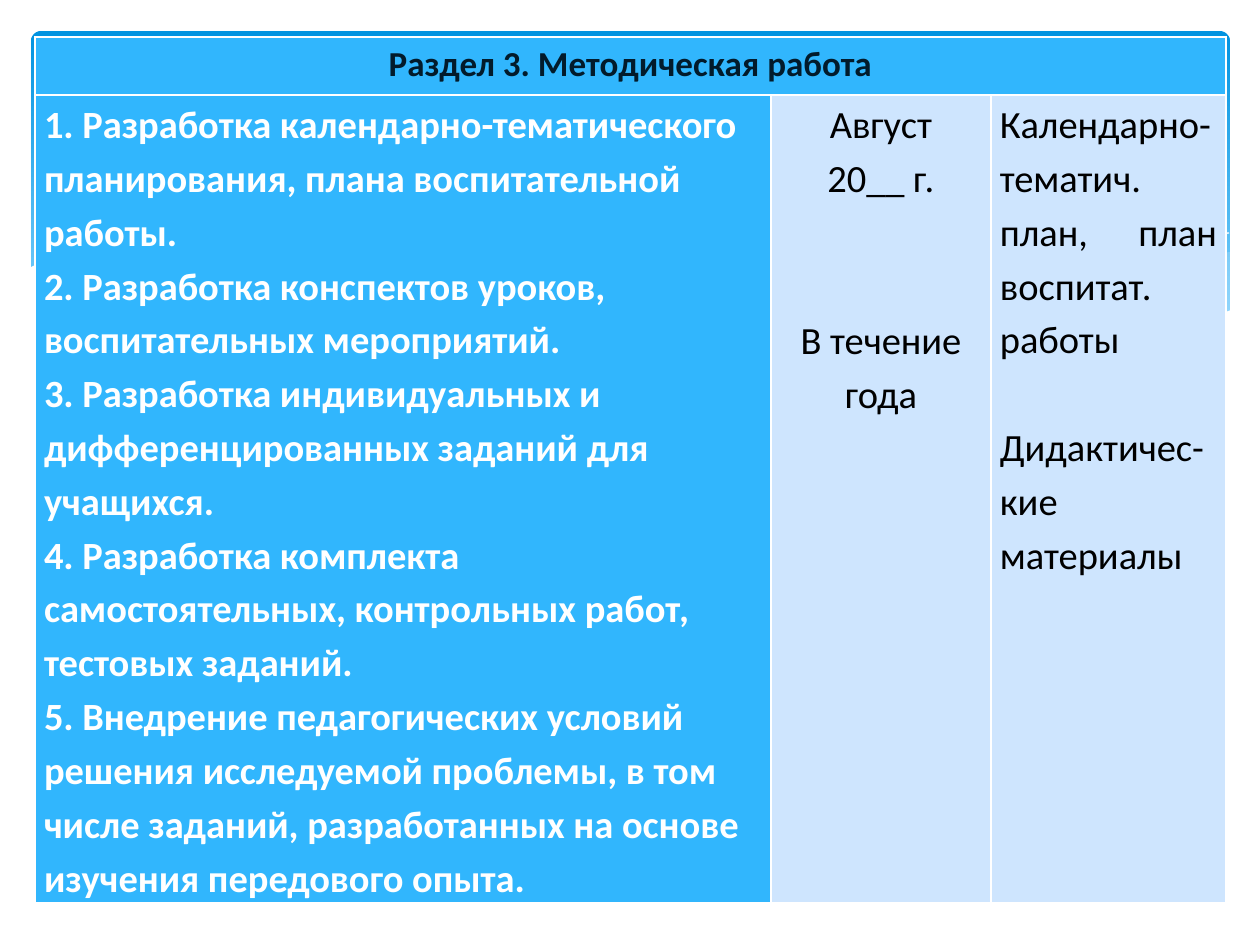
from lxml import etree
from pptx import Presentation
from pptx import util as u
from pptx.dml.color import RGBColor
from pptx.enum import shapes, text
from pptx.oxml.ns import qn

SCALE = 914400 / 126


def px(length):
    return u.Emu(round(length * SCALE))


def color(value):
    return RGBColor.from_string(value)


presentation = Presentation()
presentation.slide_width = px(1260)
presentation.slide_height = px(945)
slide = presentation.slides.add_slide(presentation.slide_layouts[6])

banner = slide.shapes.add_shape(
    shapes.MSO_SHAPE.ROUNDED_RECTANGLE, px(31), px(31), px(1199), px(340)
)
banner.adjustments[0] = 0.03
banner.shadow.inherit = False
banner.line.fill.background()
banner.fill.gradient()
banner.fill.gradient_angle = 270
for stop, position, shade in zip(
    banner.fill.gradient_stops, (0, 0.9), ("0293E0", "83D3FE")
):
    stop.position = position
    stop.color.rgb = color(shade)

right_wave = [
    (1230, 252), (1194, 257), (1142, 268), (1085, 281), (949, 312), (833, 334),
    (906, 343), (1012, 350), (1110, 344), (1178, 330), (1230, 311),
]
middle_wave = [
    (1125, 344), (1055, 334), (934, 311), (793, 280), (699, 258), (586, 241),
    (455, 233), (360, 241), (456, 256), (566, 280), (713, 312), (838, 335),
    (959, 349), (1056, 350),
]
falling_line = [
    (389, 246), (445, 238), (546, 236), (643, 242), (766, 257), (876, 276),
    (1002, 304), (1143, 343),
]
rising_line = [
    (772, 324), (876, 296), (978, 272), (1091, 251), (1164, 239), (1229, 233),
]
white_wave = [
    (1231, 310), (1197, 323), (1147, 336), (1071, 347), (999, 348), (892, 340),
    (760, 320), (634, 294), (527, 268), (428, 248), (341, 237), (243, 232),
    (150, 236), (96, 246), (50, 258), (29, 268), (29, 415), (1231, 415),
]
waves = [
    (right_wave, "C6E7FC", 29),
    (middle_wave, "C6E7FC", 40),
    (falling_line, None, None),
    (rising_line, None, None),
    (white_wave, "FFFFFF", 100),
]
for points, fill, opacity in waves:
    builder = slide.shapes.build_freeform(*points[0], scale=SCALE)
    builder.add_line_segments(points[1:], close=fill is not None)
    wave = builder.convert_to_shape()
    wave.shadow.inherit = False
    if fill is None:
        wave.fill.background()
        wave.line.color.rgb = color("FFFFFF")
        wave.line.width = u.Pt(0)
        continue
    wave.line.fill.background()
    wave.fill.solid()
    wave.fill.fore_color.rgb = color(fill)
    if opacity < 100:
        tint = wave.fill._xPr.find(".//" + qn("a:srgbClr"))
        etree.SubElement(tint, qn("a:alpha"), val=str(opacity * 1000))

table = slide.shapes.add_table(2, 3, px(35), px(37), px(1191), px(863)).table
table.first_col = True
table.horz_banding = False
for column, width in zip(table.columns, (736, 220, 235)):
    column.width = px(width)
for row, height in zip(table.rows, (58, 805)):
    row.height = px(height)
table.cell(0, 0).merge(table.cell(0, 2))

LEFT, CENTER, JUSTIFY = (
    text.PP_ALIGN.LEFT, text.PP_ALIGN.CENTER, text.PP_ALIGN.JUSTIFY
)
heading = [("Раздел 3. Методическая работа", CENTER, 0)]
tasks = [
    (task, LEFT, 0)
    for task in (
        "1. Разработка календарно-тематического планирования, плана воспитательной работы.",
        "2. Разработка конспектов уроков, воспитательных мероприятий.",
        "3. Разработка индивидуальных и дифференцированных заданий для учащихся.",
        "4. Разработка комплекта самостоятельных, контрольных работ, тестовых заданий.",
        "5. Внедрение педагогических условий решения исследуемой проблемы, в том числе "
        "заданий, разработанных на основе изучения передового опыта.",
    )
]
dates = [
    ("Август", CENTER, 0),
    ("20__ г.", CENTER, 0),
    ("В течение", CENTER, 108),
    ("года", CENTER, 0),
]
results = [
    ("Календарно-тематич.", LEFT, 0),
    ("план, план воспитат. работы", JUSTIFY, 0),
    ("Дидактичес-кие материалы", JUSTIFY, 54),
]
cells = [
    (0, 0, heading, "31B6FD", "021B2B", 20, True),
    (1, 0, tasks, "31B6FD", "FFFFFF", 22, True),
    (1, 1, dates, "CEE5FE", "000000", 22, False),
    (1, 2, results, "CEE5FE", "000000", 22, False),
]
for row, column, content, fill, font_color, size, bold in cells:
    cell = table.cell(row, column)
    cell.fill.solid()
    cell.fill.fore_color.rgb = color(fill)
    cell.margin_left = cell.margin_right = px(9)
    cell.margin_top = cell.margin_bottom = 0
    frame = cell.text_frame
    frame.text = "\n".join(wording for wording, _, _ in content)
    for paragraph, (_, alignment, gap) in zip(frame.paragraphs, content):
        paragraph.alignment = alignment
        paragraph.line_spacing = 1.15
        paragraph.space_before = px(gap)
        paragraph.font.name = "Calibri"
        paragraph.font.size = u.Pt(size)
        paragraph.font.bold = bold
        paragraph.font.color.rgb = color(font_color)

presentation.save("out.pptx")
